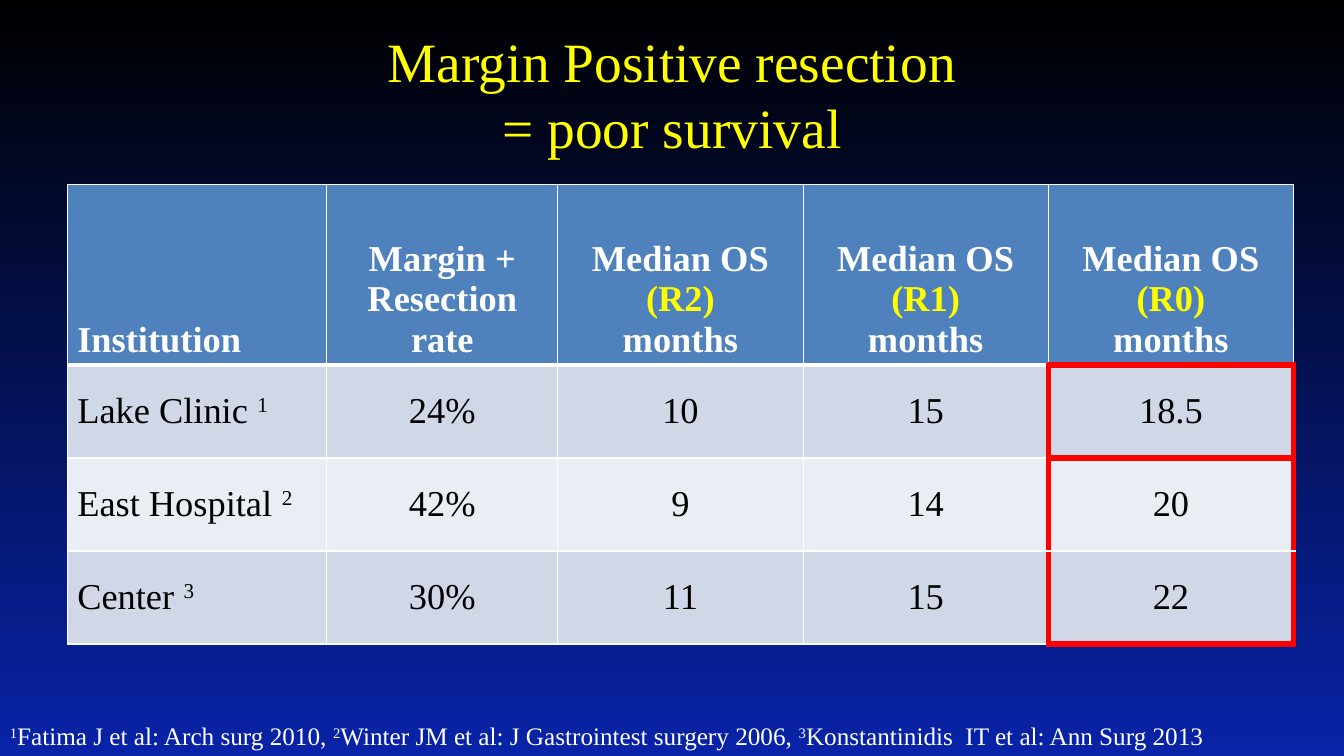
from lxml import etree
from pptx import Presentation
from pptx.dml.color import RGBColor
from pptx.enum import text as t
from pptx.oxml import ns
from pptx.util import Pt

BLACK = RGBColor(0x00, 0x00, 0x00)
NAVY = RGBColor(0x08, 0x23, 0xA8)
WHITE = RGBColor(0xFF, 0xFF, 0xFF)
YELLOW = RGBColor(0xFF, 0xFF, 0x00)
RED = RGBColor(0xFF, 0x00, 0x00)
BLUE = RGBColor(0x4F, 0x81, 0xBD)
BANDS = RGBColor(0xD0, 0xD8, 0xE8), RGBColor(0xE9, 0xED, 0xF4)
THIN, HEAVY, FRAME = (WHITE, 1), (WHITE, 3), (RED, 4.5)


def style(para, size, color, bold=False):
    font = para.font
    font.name, font.size, font.bold = "Times New Roman", Pt(size), bold
    font.color.rgb = color


def write(para, parts):
    """Add runs; every second part is superscript."""
    for i, part in enumerate(parts):
        run = para.add_run()
        run.text = part
        if i % 2:
            run.font._element.set("baseline", "30000")


prs = Presentation()
prs.slide_width, prs.slide_height = Pt(960), Pt(540)
slide = prs.slides.add_slide(prs.slide_layouts[5])

# Background
fill = slide.background.fill
fill.gradient()
fill.gradient_angle = 270
for stop, color in zip(fill.gradient_stops, (BLACK, NAVY)):
    stop.color.rgb = color

# Title
title = slide.shapes.title
title.left, title.top, title.width, title.height = Pt(48), Pt(21.6), Pt(864), Pt(90)
title.text_frame.text = "Margin Positive resection\v= poor survival"
title.text_frame.vertical_anchor = t.MSO_ANCHOR.MIDDLE
para = title.text_frame.paragraphs[0]
para.alignment = t.PP_ALIGN.CENTER
style(para, 39.6, YELLOW)

# Survival table
heads = ["Institution", "Margin + Resection rate"]
heads += [f"Median OS\n({grade})\nmonths" for grade in ("R2", "R1", "R0")]
rows = [
    heads,
    [("Lake Clinic ", "1"), "24%", "10", "15", "18.5"],
    [("East Hospital ", "2"), "42%", "9", "14", "20"],
    [("Center ", "3"), "30%", "11", "15", "22"],
]
widths = [185.5, 165, 175.2, 175.2, 175.2]
heights = [129, 66.4, 66.4, 66.4]
last, end = len(widths) - 1, len(rows) - 1
table = slide.shapes.add_table(len(rows), len(widths), Pt(48), Pt(131.8),
                               Pt(sum(widths)), Pt(sum(heights))).table
for col, width in zip(table.columns, widths):
    col.width = Pt(width)
for row, height in zip(table.rows, heights):
    row.height = Pt(height)

for r, row in enumerate(rows):
    for c, value in enumerate(row):
        cell = table.cell(r, c)
        head = r == 0
        cell.vertical_anchor = t.MSO_ANCHOR.BOTTOM if head else t.MSO_ANCHOR.MIDDLE
        frame = cell.text_frame
        if isinstance(value, tuple):
            write(frame.paragraphs[0], value)
        else:
            frame.text = value
        for para in frame.paragraphs:
            color = WHITE if head else BLACK
            style(para, 26, YELLOW if para.text.startswith("(") else color, head)
            para.alignment = t.PP_ALIGN.CENTER if c else t.PP_ALIGN.LEFT

        # Borders: a red frame around the R0 values
        final = c == last
        edges = {
            "lnL": FRAME if final and not head else THIN,
            "lnR": FRAME if not head and c >= last - 1 else THIN,
            "lnT": THIN if head else (FRAME if final else HEAVY) if r == 1 else THIN,
            "lnB": (FRAME if final else HEAVY) if head
                   else FRAME if final and r in (1, end) else THIN,
        }
        if final and r == 2:
            edges["lnT"] = FRAME
        props = cell._tc.get_or_add_tcPr()
        for tag, (color, width) in edges.items():
            line = etree.SubElement(props, ns.qn("a:" + tag), w=str(Pt(width)))
            solid = etree.SubElement(line, ns.qn("a:solidFill"))
            etree.SubElement(solid, ns.qn("a:srgbClr"), val=str(color))
        cell.fill.solid()
        cell.fill.fore_color.rgb = BLUE if head else BANDS[(r - 1) % 2]

# References
box = slide.shapes.add_textbox(Pt(0), Pt(511.2), Pt(936), Pt(28.8))
box.text_frame.word_wrap = True
para = box.text_frame.paragraphs[0]
write(para, ["", "1", "Fatima J et al: Arch surg 2010, ", "2",
             "Winter JM et al: J Gastrointest surgery 2006, ", "3",
             "Konstantinidis  IT et al: Ann Surg 2013"])
style(para, 18, WHITE)

prs.save("out.pptx")
